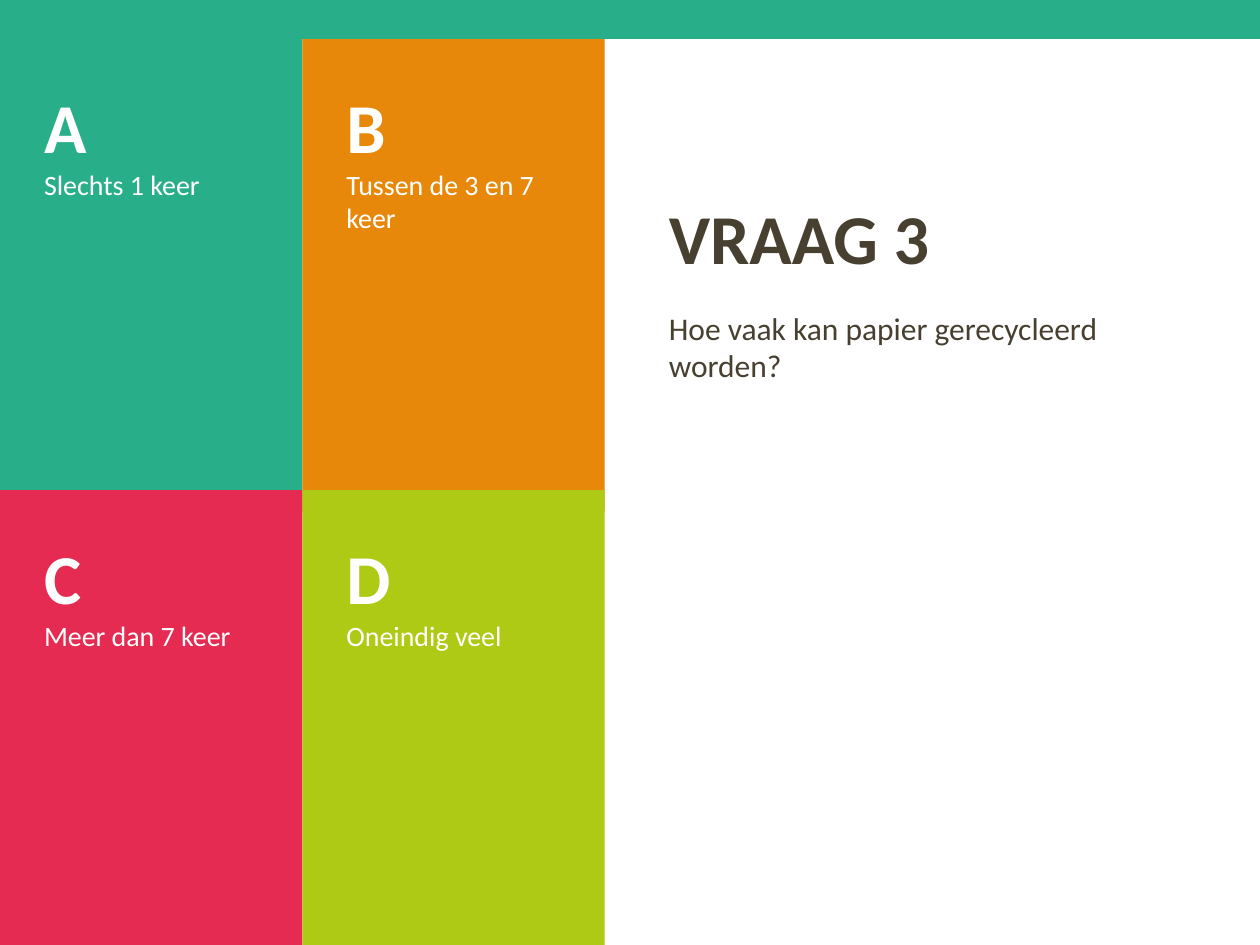
from dataclasses import dataclass
from typing import Any

from pptx import Presentation
from pptx.dml.color import RGBColor
from pptx.enum.shapes import MSO_SHAPE
from pptx.enum.text import MSO_ANCHOR, PP_ALIGN
from pptx.util import Pt


@dataclass(frozen=True)
class Theme:
    font: str = "Calibri"
    green: str = "28AF8A"
    orange: str = "E8880A"
    red: str = "E52B51"
    lime: str = "AFCA15"
    white: str = "FFFFFF"
    brown: str = "473F30"
    heading: float = 40
    question: float = 18
    answer: float = 16


@dataclass(frozen=True)
class Area:
    left: float
    top: float
    width: float
    height: float


@dataclass(frozen=True)
class Line:
    text: str
    size: float
    color: str
    bold: bool = False


@dataclass(frozen=True)
class Answer:
    letter: str
    text: str
    color: str


THEME = Theme()
PAGE_WIDTH, PAGE_HEIGHT = 720, 540
BAR_HEIGHT = 22.32
TILE_WIDTH = 172.8
TILE_INSET = 25.2
ROWS = ((BAR_HEIGHT, 270), (280.08, PAGE_HEIGHT - 280.08))
QUESTION_LEFT, QUESTION_WIDTH = 375.12, 308.16
ANSWERS = (
    Answer("A", "Slechts 1 keer", THEME.green),
    Answer("B", "Tussen de 3 en 7 keer", THEME.orange),
    Answer("C", "Meer dan 7 keer", THEME.red),
    Answer("D", "Oneindig veel", THEME.lime),
)


def set_values(target: Any, values: dict[str, Any]) -> None:
    for name, value in values.items():
        setattr(target, name, value)


def bounds(area: Area) -> tuple[Pt, ...]:
    return tuple(Pt(n) for n in (area.left, area.top, area.width, area.height))


def write_lines(box: Any, lines: list[Line], frame_values: dict[str, Any]) -> None:
    frame = box.text_frame
    set_values(frame, {"word_wrap": True, **frame_values})
    for index, line in enumerate(lines):
        para = frame.add_paragraph() if index else frame.paragraphs[0]
        para.alignment = PP_ALIGN.LEFT
        span = para.add_run()
        span.text = line.text
        set_values(span.font, {"name": THEME.font, "size": Pt(line.size), "bold": line.bold})
        span.font.color.rgb = RGBColor.from_string(line.color)


def add_block(page: Any, area: Area, color: str) -> Any:
    block = page.shapes.add_shape(MSO_SHAPE.RECTANGLE, *bounds(area))
    block.shadow.inherit = False
    block.fill.solid()
    block.fill.fore_color.rgb = RGBColor.from_string(color)
    block.line.fill.background()
    return block


def add_answer(page: Any, area: Area, answer: Answer) -> None:
    tile = add_block(page, area, answer.color)
    sides = ("margin_left", "margin_top", "margin_right", "margin_bottom")
    lines = [
        Line(answer.letter, THEME.heading, THEME.white, bold=True),
        Line(answer.text, THEME.answer, THEME.white),
    ]
    write_lines(tile, lines, {
        "vertical_anchor": MSO_ANCHOR.TOP,
        **{side: Pt(TILE_INSET) for side in sides},
    })


def add_text(page: Any, area: Area, line: Line, anchor: MSO_ANCHOR) -> None:
    box = page.shapes.add_textbox(*bounds(area))
    write_lines(box, [line], {"vertical_anchor": anchor})


def main() -> None:
    deck = Presentation()
    set_values(deck, {"slide_width": Pt(PAGE_WIDTH), "slide_height": Pt(PAGE_HEIGHT)})
    page = deck.slides.add_slide(deck.slide_layouts[6])

    add_text(page, Area(QUESTION_LEFT, 94.32, QUESTION_WIDTH, 68.4),
             Line("VRAAG 3", THEME.heading, THEME.brown, bold=True), MSO_ANCHOR.BOTTOM)
    add_text(page, Area(QUESTION_LEFT, 172.8, QUESTION_WIDTH, 179.28),
             Line("Hoe vaak kan papier gerecycleerd worden?", THEME.question, THEME.brown),
             MSO_ANCHOR.TOP)

    for index, answer in enumerate(ANSWERS):
        row, column = divmod(index, 2)
        top, height = ROWS[row]
        add_answer(page, Area(column * TILE_WIDTH, top, TILE_WIDTH, height), answer)

    add_block(page, Area(0, 0, PAGE_WIDTH, BAR_HEIGHT), THEME.green)
    deck.save("out.pptx")


if __name__ == "__main__":
    main()
